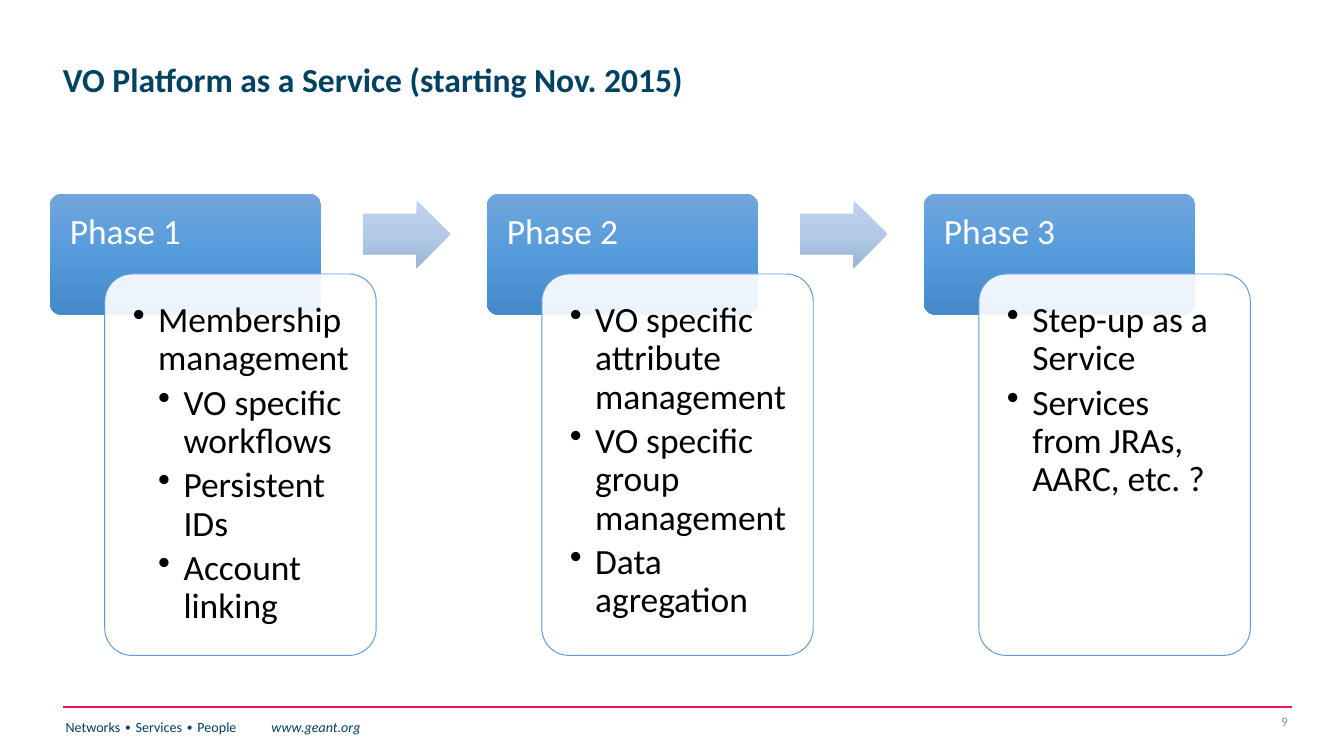
from copy import deepcopy

from lxml import etree
from pptx import Presentation
from pptx import util as u
from pptx.dml.color import RGBColor
from pptx.enum import shapes, text
from pptx.oxml.ns import qn

COLOURS = {
    "navy": "004361", "footer": "003F5E", "rule": "ED1556", "grey": "8C8C8C",
    "white": "FFFFFF", "black": "000000", "outline": "5B9BD5",
}
HEADER_GRADIENT = ["71A6DB", "559BDB", "448ACA"]
ARROW_GRADIENT = ["C0D2EB", "B3CBE9", "9BB4D3"]

# Each phase: name, then (level, wording) for its bullets
PHASES = [
    ("Phase 1", [(0, "Membership management"), (1, "VO specific workflows"),
                 (1, "Persistent IDs"), (1, "Account linking")]),
    ("Phase 2", [(0, "VO specific attribute management"),
                 (0, "VO specific group management"), (0, "Data agregation")]),
    ("Phase 3", [(0, "Step-up as a Service"),
                 (0, "Services from JRAs, AARC, etc. ?")]),
]
LEFT, TOP, PITCH = 0.94, 3.66, 8.26
WIDTH, HEADER_HEIGHT, CARD_HEIGHT = 5.13, 2.29, 7.21
CARD_SHIFT, CARD_DROP, CARD_MARGIN = 1.04, 1.52, 0.15


class SlideBuilder:
    """Draws on one slide; all places are left, top, width, height in cm."""
    font = "Calibri"

    def __init__(self, slide):
        self.slide = slide

    def colour(self, name):
        return RGBColor.from_string(COLOURS[name])

    def box(self, place, insets=(0.25, 0.13, 0.25, 0.13), anchor=text.MSO_ANCHOR.TOP):
        frame = self.slide.shapes.add_textbox(*map(u.Cm, place)).text_frame
        frame.word_wrap = True
        frame.vertical_anchor = anchor
        (frame.margin_left, frame.margin_top,
         frame.margin_right, frame.margin_bottom) = map(u.Cm, insets)
        return frame

    def span(self, para, wording, size, colour, bold=False, italic=False):
        span = para.add_run()
        span.text = wording
        font = span.font
        font.name, font.size, font.bold, font.italic = self.font, u.Pt(size), bold, italic
        font.color.rgb = self.colour(colour)

    def shape(self, kind, place, adjustments):
        shape = self.slide.shapes.add_shape(kind, *map(u.Cm, place))
        shape.shadow.inherit = False
        for index, value in enumerate(adjustments):
            shape.adjustments[index] = value
        return shape

    def gradient_shape(self, kind, place, adjustments, stops):
        """Fills from top to bottom with three evenly spaced colours."""
        shape = self.shape(kind, place, adjustments)
        shape.line.fill.background()
        fill = shape.fill
        fill.gradient()
        fill.gradient_angle = 270
        stop_list = shape._element.spPr.find(".//" + qn("a:gsLst"))
        stop_list.insert(1, deepcopy(stop_list[0]))
        for index, (stop, colour) in enumerate(zip(fill.gradient_stops, stops)):
            stop.position = index / 2
            stop.color.rgb = RGBColor.from_string(colour)

    def card(self, place):
        card = self.shape(shapes.MSO_SHAPE.ROUNDED_RECTANGLE, place, [0.1])
        card.fill.solid()
        card.fill.fore_color.rgb = self.colour("white")
        solid = card._element.spPr.find(qn("a:solidFill"))
        etree.SubElement(solid[0], qn("a:alpha"), val="90000")
        card.line.color.rgb = self.colour("outline")
        card.line.width = u.Pt(0.5)

    def bullets(self, place, items):
        frame = self.box(place, (0.38, 0.38, 0.34, 0.38))
        for index, (level, wording) in enumerate(items):
            para = frame.add_paragraph() if index else frame.paragraphs[0]
            para.level = level
            para.line_spacing = 0.9
            para.space_after = u.Pt(3.2)
            props = para._p.get_or_add_pPr()
            props.set("marL", str(u.Cm(0.48 * (level + 1))))
            props.set("indent", str(u.Cm(-0.48)))
            etree.SubElement(props, qn("a:buChar"), char="•")
            self.span(para, wording, 19, "black")

    def rule(self, start, end, colour):
        line = self.slide.shapes.add_connector(
            shapes.MSO_CONNECTOR.STRAIGHT, *map(u.Cm, start + end))
        line.line.color.rgb = self.colour(colour)
        line.line.width = u.Pt(1)
        etree.SubElement(line._element.spPr, qn("a:effectLst"))

    def footer(self, place):
        para = self.box(place).paragraphs[0]
        tabs = etree.SubElement(para._p.get_or_add_pPr(), qn("a:tabLst"))
        etree.SubElement(tabs, qn("a:tab"), pos=str(u.Cm(3.89)), algn="l")
        self.span(para, "Networks ∙ Services ∙ People\t", 7.5, "footer")
        self.span(para, "www.geant.org", 7.5, "navy", italic=True)

    def phase(self, left, name, items):
        self.gradient_shape(shapes.MSO_SHAPE.ROUNDED_RECTANGLE,
                            (left, TOP, WIDTH, HEADER_HEIGHT), [0.1], HEADER_GRADIENT)
        para = self.box((left, TOP, WIDTH, CARD_DROP), (0.38, 0.38, 0.38, 0.2)).paragraphs[0]
        para.line_spacing = 0.9
        self.span(para, name, 19, "white")
        card_left, card_top = left + CARD_SHIFT, TOP + CARD_DROP
        self.card((card_left, card_top, WIDTH, CARD_HEIGHT))
        self.bullets((card_left + CARD_MARGIN, card_top + CARD_MARGIN,
                      WIDTH - 2 * CARD_MARGIN, CARD_HEIGHT - 2 * CARD_MARGIN), items)


def main():
    deck = Presentation()
    deck.slide_width, deck.slide_height = u.Cm(25.4), u.Cm(14.29)
    page = SlideBuilder(deck.slides.add_slide(deck.slide_layouts[6]))

    page.rule((1.19, 13.36), (24.41, 13.36), "rule")
    page.footer((0.99, 13.46, 8.66, 0.89))

    for index, (name, items) in enumerate(PHASES):
        left = LEFT + index * PITCH
        page.phase(left, name, items)
        if index < len(PHASES) - 1:
            page.gradient_shape(shapes.MSO_SHAPE.RIGHT_ARROW,
                                (left + 5.92, TOP + 0.13, 1.65, 1.27),
                                [0.6, 0.5], ARROW_GRADIENT)

    number = page.box((23.04, 13.34, 1.55, 0.58), anchor=text.MSO_ANCHOR.MIDDLE).paragraphs[0]
    number.alignment = text.PP_ALIGN.RIGHT
    page.span(number, "9", 6.8, "grey")

    title = page.box((0.94, 0.15, 20.02, 2.77), anchor=text.MSO_ANCHOR.MIDDLE).paragraphs[0]
    title.line_spacing = 0.9
    page.span(title, "VO Platform as a Service (starting Nov. 2015)", 18, "navy", bold=True)

    deck.save("out.pptx")


if __name__ == "__main__":
    main()
